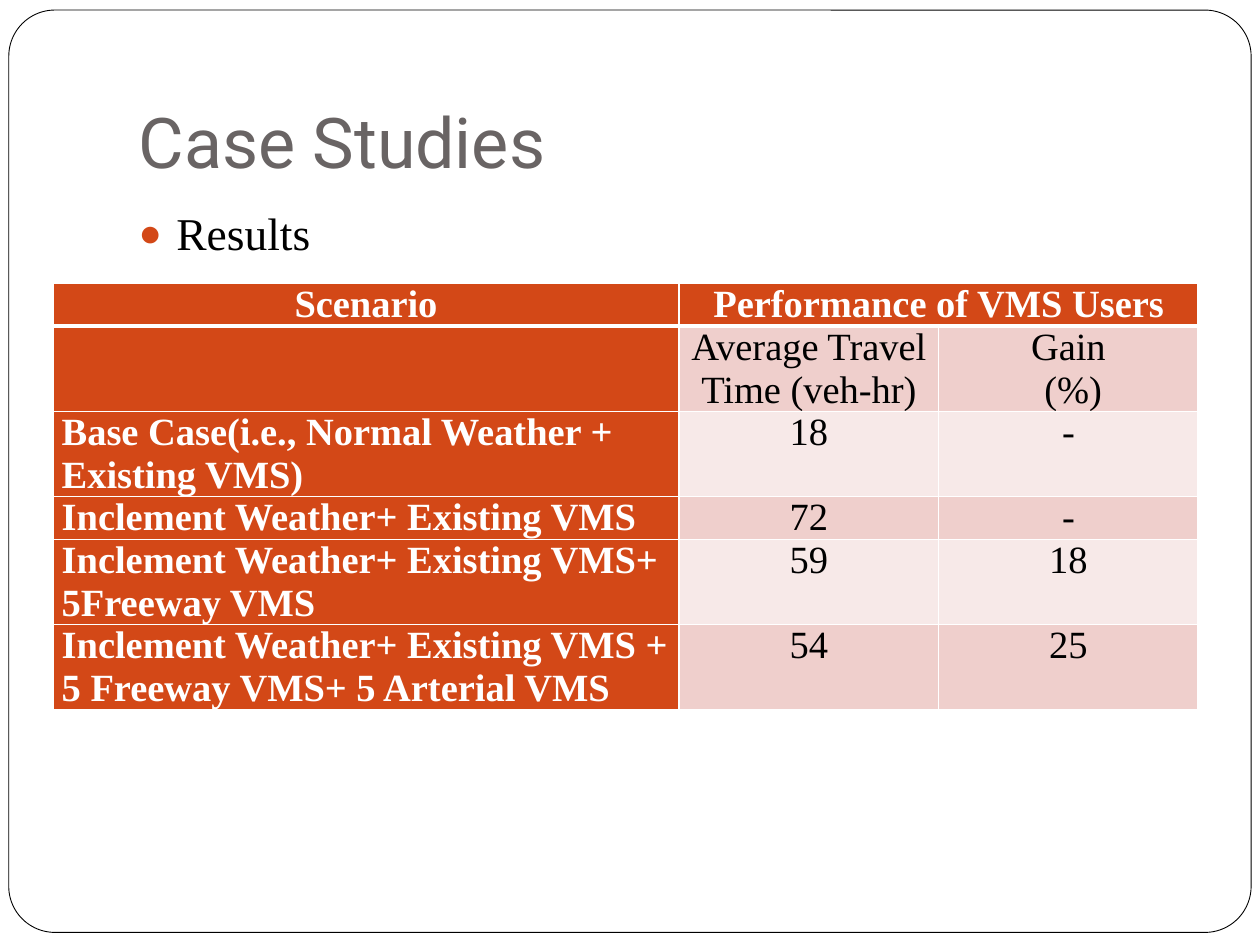
from lxml import etree
from pptx import Presentation
from pptx.dml.color import RGBColor
from pptx.enum.shapes import MSO_SHAPE
from pptx.enum.text import MSO_ANCHOR, MSO_AUTO_SIZE, PP_ALIGN
from pptx.oxml.ns import qn
from pptx.util import Inches, Pt

ROUNDED = MSO_SHAPE.ROUNDED_RECTANGLE
BOTTOM, TOP = MSO_ANCHOR.BOTTOM, MSO_ANCHOR.TOP
LEFT, CENTER = PP_ALIGN.LEFT, PP_ALIGN.CENTER
NO_AUTOFIT = MSO_AUTO_SIZE.NONE

SERIF = "Times New Roman"
ORANGE, WHITE, BLACK, GRAY = "D34817", "FFFFFF", "000000", "696464"
BANDS = ["F7E9E8", "EFCFCC"]

TITLE = "Case Studies"
BULLET = "Results"
ROWS = [
    ("Scenario", "Performance of VMS Users", ""),
    ("", "Average Travel Time (veh-hr)", "Gain\n (%)"),
    ("Base Case(i.e., Normal Weather + Existing VMS)", "18", "-"),
    ("Inclement Weather+ Existing VMS", "72", "-"),
    ("Inclement Weather+ Existing VMS+ 5Freeway VMS", "59", "18"),
    ("Inclement Weather+ Existing VMS + 5 Freeway VMS+ 5 Arterial VMS", "54", "25"),
]
COLUMN_WIDTHS = [4.97, 2.06, 2.06]
LINE_HEIGHT = 0.33
ROW_LINES = [1, 2, 2, 1, 2, 2]

TITLE_FRAME = dict(vertical_anchor=BOTTOM, auto_size=NO_AUTOFIT, word_wrap=True,
                   margin_bottom=Inches(0.1))
BODY_FRAME = dict(vertical_anchor=TOP, auto_size=NO_AUTOFIT, word_wrap=True)
CELL_FORMAT = dict(margin_left=Inches(0.07), margin_right=Inches(0.07),
                   margin_top=0, margin_bottom=0, vertical_anchor=TOP)


def apply(target, values):
    for name, value in values.items():
        setattr(target, name, value)


def color(hex_value):
    return RGBColor.from_string(hex_value)


def place(shape, left, top, width, height):
    apply(shape, dict(left=Inches(left), top=Inches(top),
                      width=Inches(width), height=Inches(height)))


def style_paragraph(paragraph, alignment, font_color, **font_format):
    paragraph.alignment = alignment
    apply(paragraph.runs[0].font, font_format)
    paragraph.runs[0].font.color.rgb = color(font_color)


def add_bullet(paragraph, character, hex_value, percent):
    properties = paragraph._p.get_or_add_pPr()
    properties.set("marL", str(Inches(0.3)))
    properties.set("indent", str(Inches(-0.3)))
    bullet_color = etree.SubElement(properties, qn("a:buClr"))
    etree.SubElement(bullet_color, qn("a:srgbClr"), val=hex_value)
    etree.SubElement(properties, qn("a:buSzPct"), val=str(percent * 1000))
    etree.SubElement(properties, qn("a:buChar"), char=character)


def set_borders(cell, widths):
    properties = cell._tc.get_or_add_tcPr()
    for index, (side, width) in enumerate(widths.items()):
        line = etree.Element(qn(f"a:ln{side}"), w=str(Pt(width)))
        fill = etree.SubElement(line, qn("a:solidFill"))
        etree.SubElement(fill, qn("a:srgbClr"), val=WHITE)
        properties.insert(index, line)


def add_frame(slide):
    frame = slide.shapes.add_shape(ROUNDED, Inches(0.07), Inches(0.08),
                                   Inches(9.86), Inches(7.32))
    frame.adjustments[0] = 0.05
    frame.shadow.inherit = False
    frame.fill.solid()
    frame.fill.fore_color.rgb = color(WHITE)
    frame.line.color.rgb = color(BLACK)
    frame.line.width = Pt(0.5)
    slide.shapes.title._element.addprevious(frame._element)


def add_headings(slide):
    title, body = slide.shapes.title, slide.placeholders[1]
    place(title, 1, 0.3, 8.5, 1.25)
    place(body, 1, 1.58, 8.5, 5)
    title.text_frame.text = TITLE
    body.text_frame.text = BULLET
    apply(title.text_frame, TITLE_FRAME)
    apply(body.text_frame, BODY_FRAME)
    style_paragraph(title.text_frame.paragraphs[0], LEFT, GRAY,
                    name="Roboto", size=Pt(40))
    paragraph = body.text_frame.paragraphs[0]
    style_paragraph(paragraph, LEFT, BLACK, name=SERIF, size=Pt(26))
    paragraph.space_before = Pt(5.8)
    add_bullet(paragraph, "●", ORANGE, 85)


def add_results(slide):
    table = slide.shapes.add_table(
        len(ROWS), len(COLUMN_WIDTHS), Inches(0.42), Inches(2.25),
        Inches(sum(COLUMN_WIDTHS)), Inches(LINE_HEIGHT * sum(ROW_LINES))).table
    for column, width in zip(table.columns, COLUMN_WIDTHS):
        column.width = Inches(width)
    for row, lines in zip(table.rows, ROW_LINES):
        row.height = Inches(LINE_HEIGHT * lines)
    table.cell(0, 1).merge(table.cell(0, 2))
    for row_index, texts in enumerate(ROWS):
        for column_index, text in enumerate(texts):
            cell = table.cell(row_index, column_index)
            heading = row_index == 0 or column_index == 0
            apply(cell, CELL_FORMAT)
            cell.fill.solid()
            cell.fill.fore_color.rgb = color(ORANGE if heading else BANDS[row_index % 2])
            set_borders(cell, dict(L=1, R=1, T=3 if row_index == 1 else 1,
                                   B=3 if row_index == 0 else 1))
            if not text:
                continue
            cell.text = text
            alignment = LEFT if column_index == 0 and row_index else CENTER
            for paragraph in cell.text_frame.paragraphs:
                style_paragraph(paragraph, alignment, WHITE if heading else BLACK,
                                name=SERIF, size=Pt(22), bold=heading)


def main():
    presentation = Presentation()
    presentation.slide_width, presentation.slide_height = Inches(10), Inches(7.5)
    slide = presentation.slides.add_slide(presentation.slide_layouts[1])
    add_frame(slide)
    add_headings(slide)
    add_results(slide)
    presentation.save("out.pptx")


if __name__ == "__main__":
    main()
